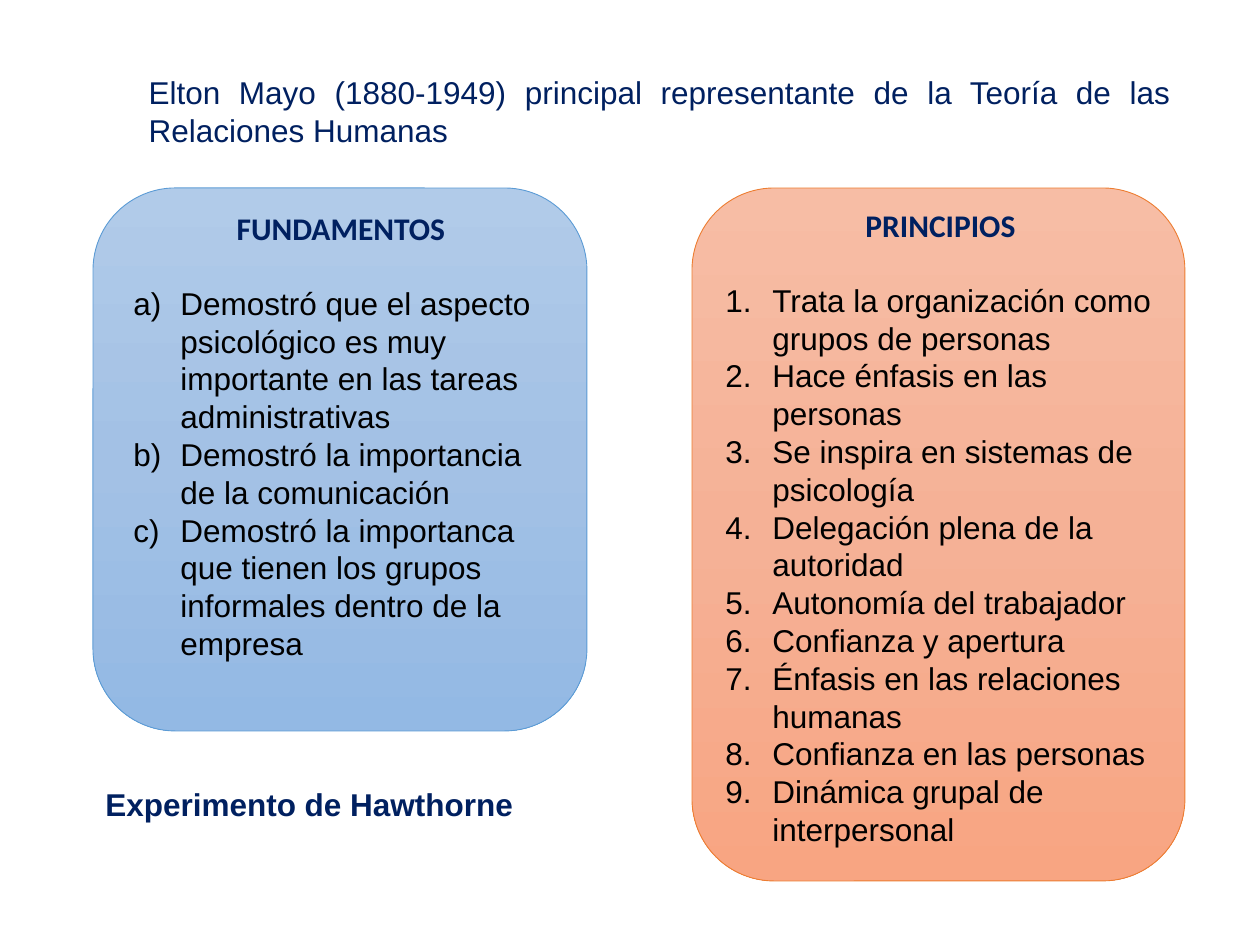
import copy
import pptx
import pptx.util
import pptx.dml.color
import pptx.enum.shapes
import pptx.enum.text
import pptx.oxml.ns
from lxml import etree

ALIGN = pptx.enum.text.PP_ALIGN
qn = pptx.oxml.ns.qn

# Content
COLORS = {"navy": "002060", "black": "000000", "blue": "5B9BD5", "orange": "ED7D31"}
TITLE = ("Elton Mayo (1880-1949) principal representante de la "
         "Teoría de las Relaciones Humanas")
EXPERIMENT = "Experimento de Hawthorne"
PANELS = [
    {"heading": "PRINCIPIOS", "numbering": "arabicPeriod", "line": "orange",
     "gradient": ["F7BDA5", "F5B196", "F8A582"],
     "panel": (692, 188, 493, 693), "text": (713, 200, 455, 699),
     "items": ["Trata la organización como grupos de personas",
               "Hace énfasis en las personas",
               "Se inspira en sistemas de psicología",
               "Delegación plena de la autoridad",
               "Autonomía del trabajador",
               "Confianza y apertura",
               "Énfasis en las relaciones humanas",
               "Confianza en las personas",
               "Dinámica grupal de interpersonal"]},
    {"heading": "FUNDAMENTOS", "numbering": "alphaLcParenR", "line": "blue",
     "gradient": ["B1CBE9", "A3C1E5", "93B9E4"],
     "panel": (93, 188, 494, 543), "text": (121, 203, 440, 471),
     "items": ["Demostró que el aspecto psicológico es muy importante "
               "en las tareas administrativas",
               "Demostró la importancia de la comunicación",
               "Demostró la importanca que tienen los grupos informales "
               "dentro de la empresa"]},
]
INDENT = 47


def px(n):
    return round(n * 914400 / 126)


def rgb(value):
    return pptx.dml.color.RGBColor.from_string(value)


def add_run(p, text, color, font="Arial", bold=False):
    r = p.add_run()
    r.text = text
    r.font.name, r.font.size, r.font.bold = font, pptx.util.Pt(18), bold
    r.font.color.rgb = rgb(COLORS[color])


def add_text_box(s, box):
    tf = s.shapes.add_textbox(*map(px, box)).text_frame
    tf.word_wrap = True
    return tf


def add_panel(s, box, gradient, line):
    sp = s.shapes.add_shape(pptx.enum.shapes.MSO_SHAPE.ROUNDED_RECTANGLE, *map(px, box))
    sp.shadow.inherit = False
    sp.line.color.rgb = rgb(COLORS[line])
    sp.line.width = pptx.util.Pt(0.5)
    sp.fill.gradient()
    sp.fill.gradient_angle = 270
    stops = sp._element.spPr.find(".//" + qn("a:gsLst"))
    stops.insert(1, copy.deepcopy(stops[0]))
    for i, (stop, color) in enumerate(zip(sp.fill.gradient_stops, gradient)):
        stop.color.rgb = rgb(color)
        stops[i].set("pos", str(i * 50000))


def add_list(s, box, heading, items, numbering):
    tf = add_text_box(s, box)
    p = tf.paragraphs[0]
    p.alignment = ALIGN.CENTER
    p.space_after = pptx.util.Pt(21)
    add_run(p, heading, "navy", "Calibri", True)
    for item in items:
        p = tf.add_paragraph()
        pPr = p._p.get_or_add_pPr()
        pPr.set("marL", str(px(INDENT)))
        pPr.set("indent", str(-px(INDENT)))
        etree.SubElement(pPr, qn("a:buFont"), typeface="Arial")
        etree.SubElement(pPr, qn("a:buAutoNum"), type=numbering)
        add_run(p, item, "black")


def main():
    prs = pptx.Presentation()
    prs.slide_width, prs.slide_height = px(1260), px(945)
    s = prs.slides.add_slide(prs.slide_layouts[5])

    # Title
    title = s.shapes.title
    title.left, title.top, title.width, title.height = map(px, (136, 67, 1047, 89))
    tf = title.text_frame
    tf.word_wrap = True
    tf.auto_size = pptx.enum.text.MSO_AUTO_SIZE.NONE
    tf.vertical_anchor = pptx.enum.text.MSO_ANCHOR.TOP
    p = tf.paragraphs[0]
    p.alignment = ALIGN.JUSTIFY
    add_run(p, TITLE, "navy")

    # Panels with their numbered lists
    for d in PANELS:
        add_panel(s, d["panel"], d["gradient"], d["line"])
    for d in reversed(PANELS):
        add_list(s, d["text"], d["heading"], d["items"], d["numbering"])

    # Experiment caption
    tf = add_text_box(s, (93, 779, 499, 50))
    add_run(tf.paragraphs[0], EXPERIMENT, "navy", bold=True)

    prs.save("out.pptx")


if __name__ == "__main__":
    main()
